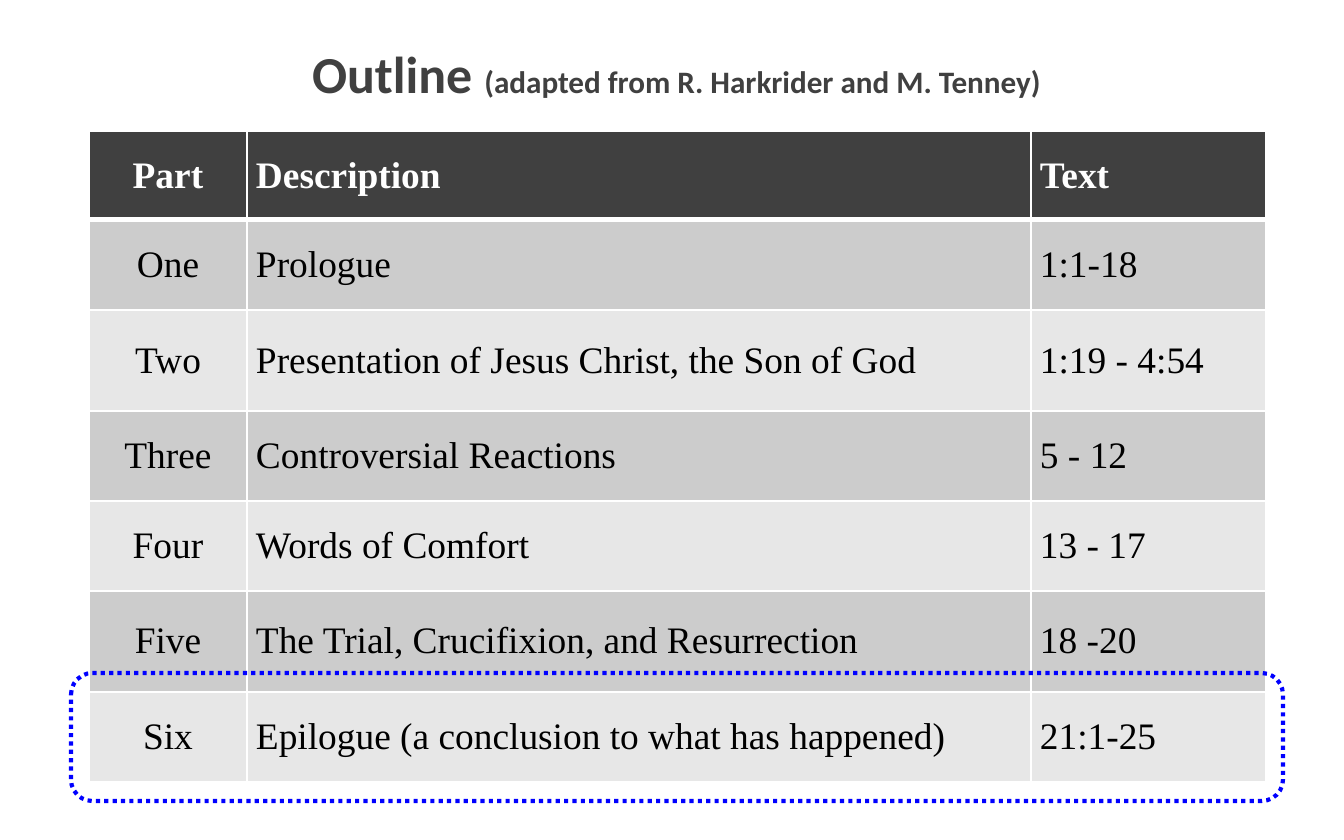
"""Build the outline slide: a title, a table of parts and a frame around the last part."""
from dataclasses import dataclass

from lxml import etree
from pptx import Presentation
from pptx.dml.color import RGBColor
from pptx.enum.dml import MSO_LINE
from pptx.enum.shapes import MSO_SHAPE
from pptx.enum.text import MSO_ANCHOR, MSO_AUTO_SIZE, PP_ALIGN
from pptx.oxml.ns import qn
from pptx.util import Pt

CENTER, LEFT = PP_ALIGN.CENTER, PP_ALIGN.LEFT
MIDDLE = MSO_ANCHOR.MIDDLE
NO_FIT = MSO_AUTO_SIZE.NONE
DOTTED = MSO_LINE.ROUND_DOT
ROUNDED = MSO_SHAPE.ROUNDED_RECTANGLE
TITLE_ONLY = 5
PX = 914400 / 134.4


@dataclass(frozen=True)
class Theme:
    dark: str = "404040"
    white: str = "FFFFFF"
    black: str = "000000"
    bands: tuple = ("CCCCCC", "E7E7E7")
    frame: str = "0000FF"
    title_font: str = "Calibri"
    table_font: str = "Times New Roman"
    title_size: float = 27.8
    source_size: float = 16.7
    table_size: float = 20
    frame_width: float = 2.25


def px(*lengths):
    return [round(length * PX) for length in lengths]


def style(font, name, size, color, bold):
    font.name, font.size, font.bold = name, Pt(size), bold
    font.color.rgb = RGBColor.from_string(color)


theme = Theme()
deck = Presentation()
deck.slide_width, deck.slide_height = px(1344, 840)
slide = deck.slides.add_slide(deck.slide_layouts[TITLE_ONLY])

title = slide.shapes.title
title.left, title.top, title.width, title.height = px(32, 35, 1289, 75)
title.text_frame.auto_size = NO_FIT
title.text_frame.vertical_anchor = MIDDLE
heading = title.text_frame.paragraphs[0]
heading.alignment = CENTER
for words, size in (
    ("Outline ", theme.title_size),
    ("(adapted from R. Harkrider and M. Tenney)", theme.source_size),
):
    run = heading.add_run()
    run.text = words
    style(run.font, theme.title_font, size, theme.dark, True)

parts = [
    ("Part", "Description", "Text"),
    ("One", "Prologue", "1:1-18"),
    ("Two", "Presentation of Jesus Christ, the Son of God", "1:19 - 4:54"),
    ("Three", "Controversial Reactions", "5 - 12"),
    ("Four", "Words of Comfort", "13 - 17"),
    ("Five", "The Trial, Crucifixion, and Resurrection", "18 -20"),
    ("Six", "Epilogue (a conclusion to what has happened)", "21:1-25"),
]
column_widths = (158, 784, 235)
row_heights = (89, 90, 101, 90, 90, 101, 90)
outline = slide.shapes.add_table(
    len(parts), len(column_widths),
    *px(89, 131, sum(column_widths), sum(row_heights)),
).table
for column, width in zip(outline.columns, px(*column_widths)):
    column.width = width
for row, height in zip(outline.rows, px(*row_heights)):
    row.height = height

for r, part in enumerate(parts):
    is_header = r == 0
    fill = theme.dark if is_header else theme.bands[(r - 1) % 2]
    for c, words in enumerate(part):
        cell = outline.cell(r, c)
        cell.vertical_anchor = MIDDLE
        cell.margin_left, cell.margin_right = px(9, 9)
        cell.margin_top, cell.margin_bottom = px(5, 5)
        properties = cell._tc.get_or_add_tcPr()
        for side in "LRTB":
            thick = (is_header and side == "B") or (r == 1 and side == "T")
            border = etree.SubElement(
                properties, qn(f"a:ln{side}"), w=str(Pt(3 if thick else 1)))
            paint = etree.SubElement(border, qn("a:solidFill"))
            etree.SubElement(paint, qn("a:srgbClr"), val=theme.white)
        cell.fill.solid()
        cell.fill.fore_color.rgb = RGBColor.from_string(fill)
        cell.text_frame.text = words
        paragraph = cell.text_frame.paragraphs[0]
        paragraph.alignment = CENTER if c == 0 else LEFT
        style(paragraph.runs[0].font, theme.table_font, theme.table_size,
              theme.white if is_header else theme.black, is_header)

highlight = slide.shapes.add_shape(ROUNDED, *px(71, 673, 1212, 128))
highlight.shadow.inherit = False
highlight.fill.background()
highlight.line.color.rgb = RGBColor.from_string(theme.frame)
highlight.line.width = Pt(theme.frame_width)
highlight.line.dash_style = DOTTED

deck.save("out.pptx")
